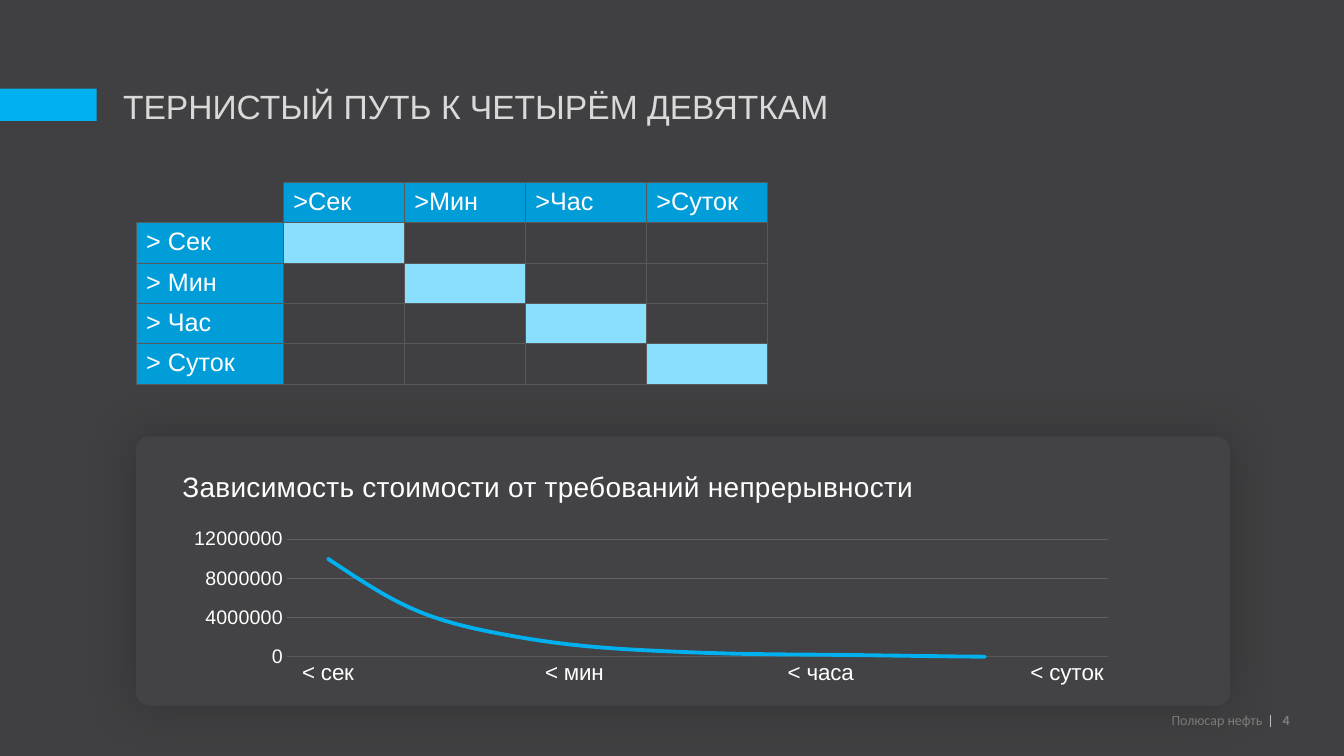
import dataclasses

import lxml.etree
import pptx
import pptx.chart.data
import pptx.dml.color
import pptx.enum.chart
import pptx.enum.shapes
import pptx.enum.text
import pptx.oxml
import pptx.oxml.ns
import pptx.util

EMU_PER_PX = 9144  # 100 px to the inch
qn = pptx.oxml.ns.qn
SHAPES = pptx.enum.shapes.MSO_SHAPE
ALIGN = pptx.enum.text.PP_ALIGN
ANCHOR = pptx.enum.text.MSO_ANCHOR


@dataclasses.dataclass(frozen=True)
class Theme:
    background: str = "403F41"
    accent: str = "00B0F0"
    title: str = "D9D9D9"
    text: str = "FFFFFF"
    muted: str = "808080"
    divider: str = "BFBFBF"
    panel: str = "434244"
    header: str = "009DD9"
    highlight: str = "8ADFFF"
    border: str = "595959"
    grid: str = "626064"
    curve: str = "00B0EF"
    font: str = "Arial"
    footer_font: str = "Calibri"
    title_size: int = 24
    heading_size: int = 20
    table_size: int = 18
    category_size: int = 16
    value_size: int = 14
    chart_size: int = 10
    footer_size: int = 10


THEME = Theme()
PERIODS = ["Сек", "Мин", "Час", "Суток"]
COST_CATEGORIES = ["< сек", "", "", "< мин", "", "", "< часа", "", "", "< суток"]
COSTS = [10000000, 5000000, 2500000, 1200000, 600000,
         300000, 200000, 100000, 0, 0]


def px(*lengths):
    return [pptx.util.Emu(length * EMU_PER_PX) for length in lengths]


def rgb(colour):
    return pptx.dml.color.RGBColor.from_string(colour)


def style_font(font, size, colour, name=THEME.font, bold=False):
    font.size = pptx.util.Pt(size)
    font.color.rgb = rgb(colour)
    font.name = name
    font.bold = bold


def style_line(line, colour, width):
    line.color.rgb = rgb(colour)
    line.width = pptx.util.Pt(width)


def add_block(slide, preset, box, colour):
    block = slide.shapes.add_shape(preset, *px(*box))
    block.shadow.inherit = False
    block.fill.solid()
    block.fill.fore_color.rgb = rgb(colour)
    block.line.fill.background()
    return block


def add_label(slide, box, text, size, colour, inset=None, align=ALIGN.LEFT, **font):
    """Add a one-line text box and return its run."""
    frame = slide.shapes.add_textbox(*px(*box)).text_frame
    frame.word_wrap = True
    if inset is not None:
        frame.margin_left = frame.margin_right = inset
        frame.margin_top = frame.margin_bottom = inset
        frame.vertical_anchor = ANCHOR.MIDDLE
    frame.text = text
    frame.paragraphs[0].alignment = align
    run = frame.paragraphs[0].runs[0]
    style_font(run.font, size, colour, **font)
    return run


def build_header(slide, left, top, width, height):
    add_block(slide, SHAPES.RECTANGLE, (left, top + 8, 96, 32), THEME.accent)
    title = slide.shapes.title
    title.left, title.top, title.width, title.height = px(
        left + 112, top, width - 112, height)
    frame = title.text_frame
    frame.text = "ТЕРНИСТЫЙ ПУТЬ К ЧЕТЫРЁМ ДЕВЯТКАМ"
    frame.auto_size = pptx.enum.text.MSO_AUTO_SIZE.NONE
    frame.vertical_anchor = ANCHOR.TOP
    frame.paragraphs[0].alignment = ALIGN.LEFT
    style_font(frame.paragraphs[0].runs[0].font, THEME.title_size, THEME.title)


def build_footer(slide, left, top, width, height):
    divider_x = left + 467
    add_label(slide, (left, top, 459, height), "Полюсар нефть",
              THEME.footer_size, THEME.muted, inset=0, align=ALIGN.RIGHT,
              name=THEME.footer_font)
    divider = slide.shapes.add_connector(
        pptx.enum.shapes.MSO_CONNECTOR.STRAIGHT,
        *px(divider_x, top + 4, divider_x, top + 16))
    style_line(divider.line, THEME.divider, 0.5)
    lxml.etree.SubElement(divider.element.spPr, qn("a:effectLst"))
    add_label(slide, (left + 479, top, width - 479, height), "4",
              THEME.footer_size, THEME.muted, inset=0,
              name=THEME.footer_font, bold=True)


def set_borders(cell, hidden=""):
    """Outline all four sides of a cell, except those listed in hidden."""
    properties = cell._tc.get_or_add_tcPr()
    for index, side in enumerate("LRTB"):
        border = lxml.etree.Element(qn(f"a:ln{side}"), w="12700")
        if side in hidden:
            lxml.etree.SubElement(border, qn("a:noFill"))
        else:
            fill = lxml.etree.SubElement(border, qn("a:solidFill"))
            lxml.etree.SubElement(fill, qn("a:srgbClr"), val=THEME.border)
        properties.insert(index, border)


def build_matrix(slide, left, top, width, height):
    count = len(PERIODS) + 1
    table = slide.shapes.add_table(count, count, *px(left, top, width, height)).table
    table.first_row = table.horz_banding = False
    first_width = 146
    for index in range(count):
        column_width = (width - first_width) // (count - 1) if index else first_width
        table.columns[index].width, table.rows[index].height = px(
            column_width, height // count)
    for row in range(count):
        for column in range(count):
            cell = table.cell(row, column)
            corner = row == column == 0
            is_header = not corner and 0 in (row, column)
            if is_header:
                cell.text = f">{PERIODS[column - 1]}" if row == 0 else f"> {PERIODS[row - 1]}"
                style_font(cell.text_frame.paragraphs[0].runs[0].font,
                           THEME.table_size, THEME.text)
            if is_header or (row == column and not corner):
                cell.fill.solid()
                cell.fill.fore_color.rgb = rgb(
                    THEME.header if is_header else THEME.highlight)
            else:
                cell.fill.background()
            set_borders(cell, hidden="LT" if corner else "")


def add_glow_shadow(shape, blur, opacity):
    effects = shape.element.spPr.find(qn("a:effectLst"))
    shadow = lxml.etree.SubElement(
        effects, qn("a:outerShdw"), blurRad=str(pptx.util.Pt(blur)),
        dist="0", dir="0", algn="ctr", rotWithShape="0")
    colour = lxml.etree.SubElement(shadow, qn("a:srgbClr"), val="000000")
    lxml.etree.SubElement(colour, qn("a:alpha"), val=str(opacity * 1000))


def set_plot_area(chart, **fractions):
    """Fix the inner plot area as fractions x, y, w, h of the chart."""
    plot_area = chart.element.find(".//" + qn("c:plotArea"))
    for layout in plot_area.findall(qn("c:layout")):
        plot_area.remove(layout)
    layout = lxml.etree.Element(qn("c:layout"))
    manual = lxml.etree.SubElement(layout, qn("c:manualLayout"))
    settings = {"layoutTarget": "inner", "xMode": "edge", "yMode": "edge", **fractions}
    for tag, value in settings.items():
        lxml.etree.SubElement(manual, qn(f"c:{tag}"), val=str(value))
    plot_area.insert(0, layout)


def build_cost_chart(slide, box):
    data = pptx.chart.data.CategoryChartData()
    data.categories = COST_CATEGORIES
    data.add_series("Series 1", COSTS)
    chart = slide.shapes.add_chart(
        pptx.enum.chart.XL_CHART_TYPE.LINE, *px(*box), data).chart
    chart.has_title = chart.has_legend = False
    style_font(chart.font, THEME.chart_size, THEME.text)
    chart.plots[0].vary_by_categories = False

    cost = chart.plots[0].series[0]
    cost.smooth = True
    cost.marker.style = pptx.enum.chart.XL_MARKER_STYLE.NONE
    style_line(cost.format.line, THEME.curve, 2.75)
    cost.format.line._get_or_add_ln().set("cap", "rnd")

    for axis, size in ((chart.category_axis, THEME.category_size),
                       (chart.value_axis, THEME.value_size)):
        axis.major_tick_mark = axis.minor_tick_mark = pptx.enum.chart.XL_TICK_MARK.NONE
        style_font(axis.tick_labels.font, size, THEME.text)
    style_line(chart.category_axis.format.line, THEME.border, 0.75)
    values = chart.value_axis
    values.minimum_scale, values.maximum_scale, values.major_unit = 0, 12000000, 4000000
    values.format.line.fill.background()
    values.has_major_gridlines = True
    style_line(values.major_gridlines.format.line, THEME.grid, 0.75)
    set_plot_area(chart, x=0.12, y=0.08, w=0.86, h=0.72)


def build_cost_panel(slide, left, top, width, height):
    panel = add_block(slide, SHAPES.ROUNDED_RECTANGLE,
                      (left, top, width, height), THEME.panel)
    panel.adjustments[0] = 0.05
    add_glow_shadow(panel, blur=36.6, opacity=21)
    build_cost_chart(slide, (left + 36, top + 89, width - 138, height - 105))
    heading = add_label(slide, (left + 36, top + 28, 775, 44),
                        "Зависимость стоимости от требований непрерывности",
                        THEME.heading_size, THEME.text)
    heading.font._element.set("spc", "20")


def main():
    presentation = pptx.Presentation()
    presentation.slide_width, presentation.slide_height = px(1333, 750)
    slide = presentation.slides.add_slide(presentation.slide_layouts[5])
    slide.background.fill.solid()
    slide.background.fill.fore_color.rgb = rgb(THEME.background)
    build_header(slide, 0, 80, 839, 50)
    build_footer(slide, 793, 705, 510, 18)
    build_cost_panel(slide, 135, 433, 1085, 267)
    build_matrix(slide, 135, 181, 626, 200)
    presentation.save("out.pptx")


if __name__ == "__main__":
    main()
